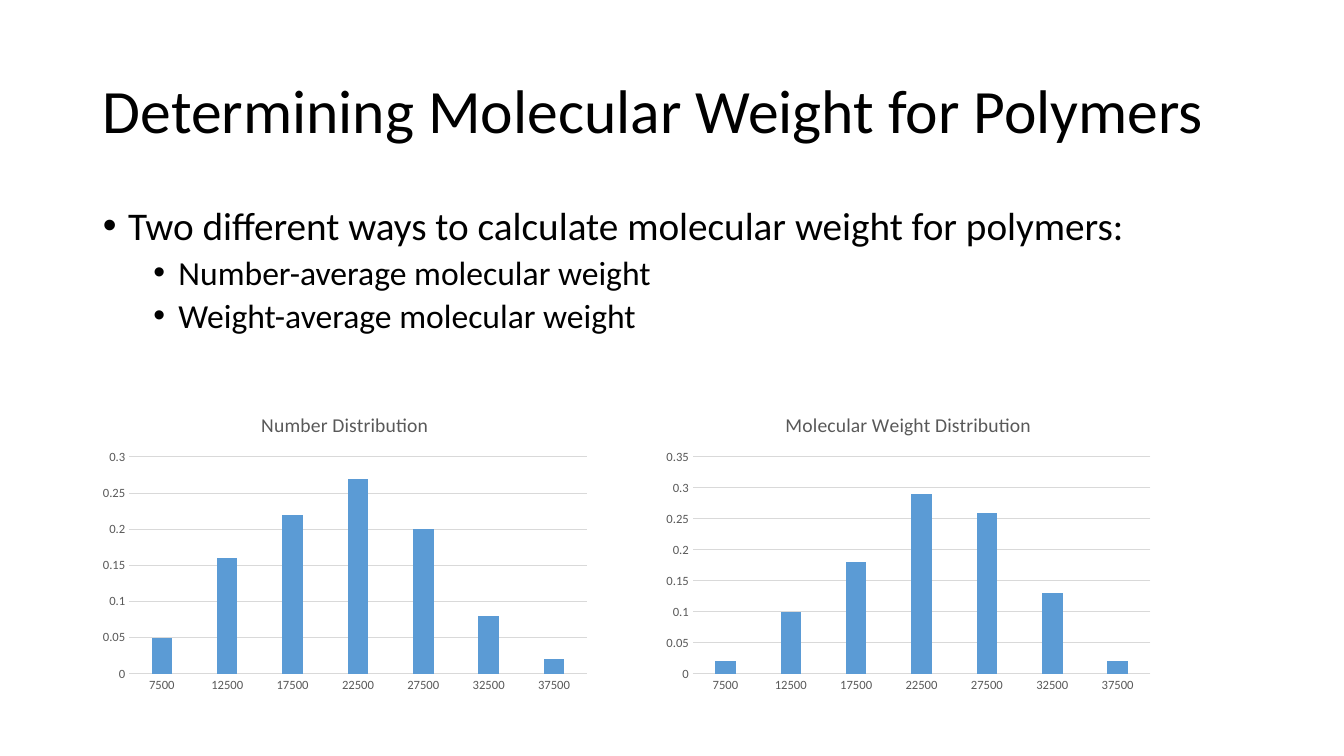
"""Build a slide on molecular weight averages with two distribution charts."""
import dataclasses

import lxml.etree
import pptx
import pptx.chart.data
import pptx.dml.color
import pptx.enum.chart
import pptx.enum.text
import pptx.oxml.ns
import pptx.util

TITLE = "Determining Molecular Weight for Polymers"
BODY = [
    (0, "Two different ways to calculate molecular weight for polymers:"),
    (1, "Number-average molecular weight"),
    (1, "Weight-average molecular weight"),
]
CATS = ["7500", "12500", "17500", "22500", "27500", "32500", "37500"]
CHARTS = [
    ("Number Distribution", 0.3, [0.05, 0.16, 0.22, 0.27, 0.2, 0.08, 0.02]),
    ("Molecular Weight Distribution", 0.35,
     [0.02, 0.1, 0.18, 0.29, 0.26, 0.13, 0.02]),
]
WIDE, HIGH = 13.33, 7.5
LEFT, SPAN = 0.92, 11.5
STEP, SIZE = 5.59, (5, 3)
ROWS = {"title": (0.4, 1.45), "body": (2, 1.57), "chart": 3.93}


@dataclasses.dataclass(frozen=True)
class Theme:
    """Colours, font and type sizes."""
    font: str = "Calibri"
    ink: str = "000000"
    gray: str = "595959"
    rule: str = "D9D9D9"
    bar: str = "5B9BD5"
    title: int = 44
    levels: tuple = (28, 24)
    head: int = 14
    base: int = 10
    tick: int = 9


THEME = Theme()


def color(code):
    """Turn a hex code into a colour."""
    return pptx.dml.color.RGBColor.from_string(code)


def style(font, size, code):
    """Set face, size and colour of a font."""
    font.name = THEME.font
    font.size = pptx.util.Pt(size)
    font.bold = False
    font.color.rgb = color(code)


def write(para, text, size, code=THEME.ink):
    """Add one styled run."""
    run = para.add_run()
    run.text = text
    style(run.font, size, code)


def place(shape, row):
    """Put a placeholder on its row."""
    top, high = row
    shape.left, shape.top, shape.width, shape.height = map(
        pptx.util.Inches, (LEFT, top, SPAN, high))
    shape.text_frame.auto_size = pptx.enum.text.MSO_AUTO_SIZE.NONE
    return shape.text_frame


def bullet(para, level):
    """Give a paragraph its indent and bullet."""
    props = para._p.get_or_add_pPr()
    props.set("marL", str(pptx.util.Inches(0.25 + 0.5 * level)))
    props.set("indent", str(pptx.util.Inches(-0.25)))
    for tag, key, value in (("a:buFont", "typeface", "Arial"),
                            ("a:buChar", "char", "•")):
        lxml.etree.SubElement(props, pptx.oxml.ns.qn(tag)).set(key, value)


def rule(line):
    """Style a thin chart line."""
    line.color.rgb = color(THEME.rule)
    line.width = pptx.util.Pt(0.75)


def plot(slide, col, name, peak, vals):
    """Add one column chart."""
    data = pptx.chart.data.CategoryChartData()
    data.categories = CATS
    data.add_series("Series 1", vals)
    box = (LEFT + col * STEP, ROWS["chart"], *SIZE)
    chart = slide.shapes.add_chart(
        pptx.enum.chart.XL_CHART_TYPE.COLUMN_CLUSTERED,
        *map(pptx.util.Inches, box), data).chart
    style(chart.font, THEME.base, THEME.ink)
    chart.has_legend = False
    chart.has_title = True
    write(chart.chart_title.text_frame.paragraphs[0],
          name, THEME.head, THEME.gray)
    chart.chart_title.include_in_layout = False

    cat, val = chart.category_axis, chart.value_axis
    for axis in (cat, val):
        style(axis.tick_labels.font, THEME.tick, THEME.gray)
        axis.major_tick_mark = pptx.enum.chart.XL_TICK_MARK.NONE
        axis.minor_tick_mark = pptx.enum.chart.XL_TICK_MARK.NONE
    rule(cat.format.line)
    val.format.line.fill.background()
    val.has_major_gridlines = True
    rule(val.major_gridlines.format.line)
    val.minimum_scale, val.maximum_scale, val.major_unit = 0, peak, 0.05
    val.tick_labels.number_format = "General"
    val.tick_labels.number_format_is_linked = False

    bars = chart.plots[0]
    bars.gap_width, bars.overlap = 219, -27
    bars.vary_by_categories = False
    fill = bars.series[0].format.fill
    fill.solid()
    fill.fore_color.rgb = color(THEME.bar)


def main():
    """Assemble and save the slide."""
    deck = pptx.Presentation()
    deck.slide_width = pptx.util.Inches(WIDE)
    deck.slide_height = pptx.util.Inches(HIGH)
    slide = deck.slides.add_slide(deck.slide_layouts[1])

    frame = place(slide.shapes.title, ROWS["title"])
    frame.vertical_anchor = pptx.enum.text.MSO_ANCHOR.MIDDLE
    para = frame.paragraphs[0]
    para.alignment = pptx.enum.text.PP_ALIGN.LEFT
    para.line_spacing = 0.9
    write(para, TITLE, THEME.title)

    frame = place(slide.placeholders[1], ROWS["body"])
    for i, (level, text) in enumerate(BODY):
        para = frame.add_paragraph() if i else frame.paragraphs[0]
        para.level = level
        para.line_spacing = 0.9
        para.space_before = pptx.util.Pt(5 if level else 10)
        bullet(para, level)
        write(para, text, THEME.levels[level])

    for col, item in enumerate(CHARTS):
        plot(slide, col, *item)
    deck.save("out.pptx")


if __name__ == "__main__":
    main()
